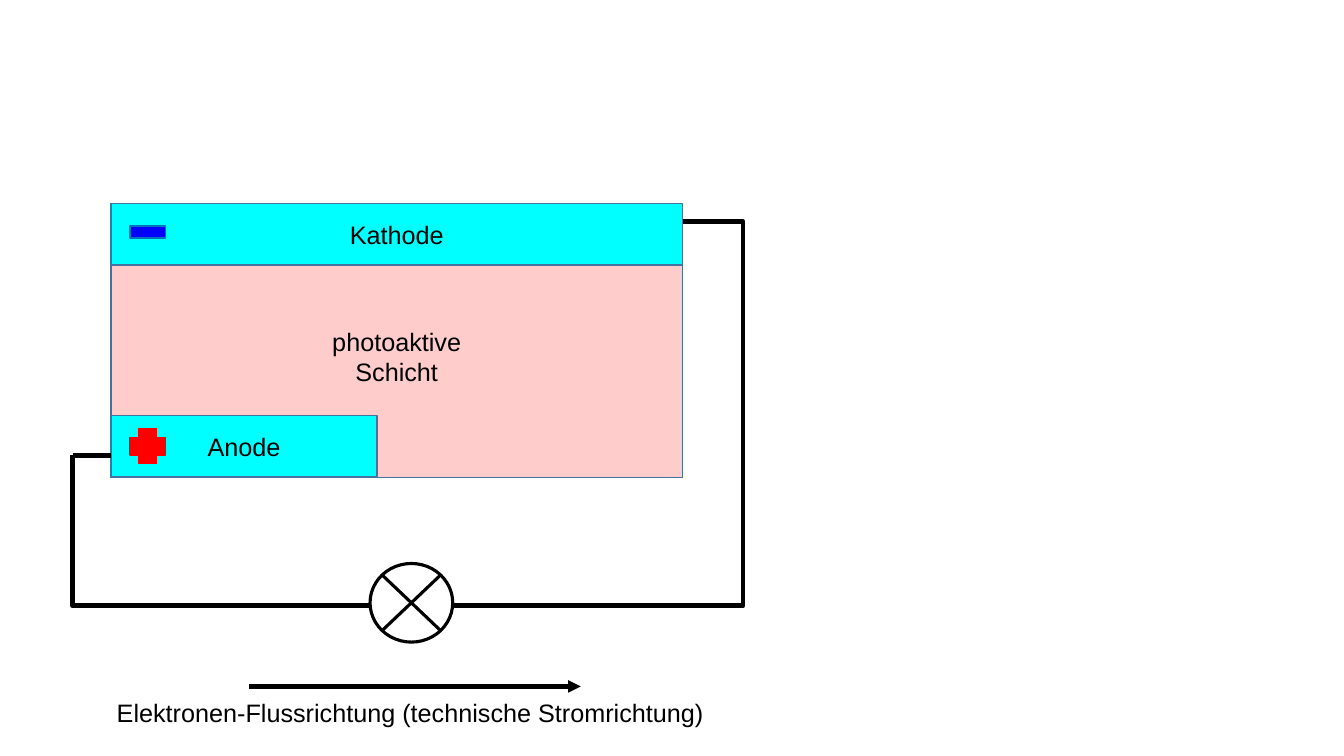
from lxml import etree
from pptx import Presentation
from pptx.dml.color import RGBColor
from pptx.enum.shapes import MSO_CONNECTOR, MSO_SHAPE
from pptx.enum.text import MSO_ANCHOR, MSO_AUTO_SIZE, PP_ALIGN
from pptx.oxml.ns import qn
from pptx.util import Inches, Pt

RECT = MSO_SHAPE.RECTANGLE
LAMP = MSO_SHAPE.FLOWCHART_SUMMING_JUNCTION
PLUS = MSO_SHAPE.CROSS
STRAIGHT = MSO_CONNECTOR.STRAIGHT
TOP, MIDDLE = MSO_ANCHOR.TOP, MSO_ANCHOR.MIDDLE
LEFT, CENTER = PP_ALIGN.LEFT, PP_ALIGN.CENTER
FIT = MSO_AUTO_SIZE.SHAPE_TO_FIT_TEXT

BLACK, WHITE = "000000", "FFFFFF"
ELECTRODE, LAYER, EDGE = "00FFFF", "FFCCCC", "43739E"
PLUS_RED, MINUS_BLUE, MINUS_EDGE = "FF0000", "0000FF", "0070C0"


def rgb(value):
    return RGBColor.from_string(value)


class Diagram:
    font = "Arial"
    size = 18

    def __init__(self, slide):
        self.s = slide

    def add_lines(self, tf, lines, align):
        tf.word_wrap = True
        for i, line in enumerate(lines):
            p = tf.paragraphs[0] if i == 0 else tf.add_paragraph()
            p.alignment = align
            r = p.add_run()
            r.text = line
            r.font.name = self.font
            r.font.size = Pt(self.size)
            r.font.color.rgb = rgb(BLACK)

    def shape(self, kind, box, fill, line, width=1.0, lines=(),
              anchor=MIDDLE, top=0.05, bottom=0.05):
        sp = self.s.shapes.add_shape(kind, *map(Inches, box))
        sp.shadow.inherit = False
        if fill:
            sp.fill.solid()
            sp.fill.fore_color.rgb = rgb(fill)
        else:
            sp.fill.background()
        sp.line.color.rgb = rgb(line)
        sp.line.width = Pt(width)
        if lines:
            tf = sp.text_frame
            tf.vertical_anchor = anchor
            tf.margin_top, tf.margin_bottom = Inches(top), Inches(bottom)
            self.add_lines(tf, lines, CENTER)

    def text(self, box, line):
        sp = self.s.shapes.add_textbox(*map(Inches, box))
        self.add_lines(sp.text_frame, [line], LEFT)
        sp.text_frame.auto_size = FIT

    def line(self, x1, y1, x2, y2, arrow=False):
        c = self.s.shapes.add_connector(STRAIGHT, *map(Inches, (x1, y1, x2, y2)))
        c.line.color.rgb = rgb(BLACK)
        c.line.width = Pt(3)
        sp_pr = c._element.spPr
        if arrow:
            etree.SubElement(sp_pr.find(qn("a:ln")), qn("a:tailEnd"), type="triangle")
        etree.SubElement(sp_pr, qn("a:effectLst"))


def main():
    prs = Presentation()
    prs.slide_width, prs.slide_height = Inches(13.33), Inches(7.5)
    d = Diagram(prs.slides.add_slide(prs.slide_layouts[6]))

    cell_x, cell_w = 1.1, 5.67
    wire_x, sign_x = 0.72, 1.29

    d.shape(RECT, (wire_x, 2.2, 6.65, 3.81), None, BLACK, 3.5)
    d.shape(RECT, (0.28, 1.98, 6.48, 2.53), WHITE, WHITE)
    d.shape(RECT, (cell_x, 2.02, cell_w, 2.72), ELECTRODE, EDGE,
            lines=["Kathode"], anchor=TOP, top=0.16)
    d.shape(RECT, (cell_x, 2.63, cell_w, 2.11), LAYER, EDGE,
            lines=["photoaktive", "Schicht"], bottom=0.34)
    d.shape(LAMP, (3.67, 5.59, 0.82, 0.78), WHITE, BLACK, 2.25)
    d.shape(RECT, (cell_x, 4.12, 2.64, 0.61), ELECTRODE, EDGE, lines=["Anode"])

    d.line(2.47, 6.81, 5.76, 6.81, arrow=True)
    d.text((1.06, 6.87, 6.1, 0.4), "Elektronen-Flussrichtung (technische Stromrichtung)")

    d.shape(PLUS, (sign_x, 4.25, 0.35, 0.35), PLUS_RED, PLUS_RED)
    d.shape(RECT, (sign_x, 2.24, 0.35, 0.12), MINUS_BLUE, MINUS_EDGE)
    d.line(wire_x, 4.52, cell_x, 4.52)

    prs.save("out.pptx")


if __name__ == "__main__":
    main()
